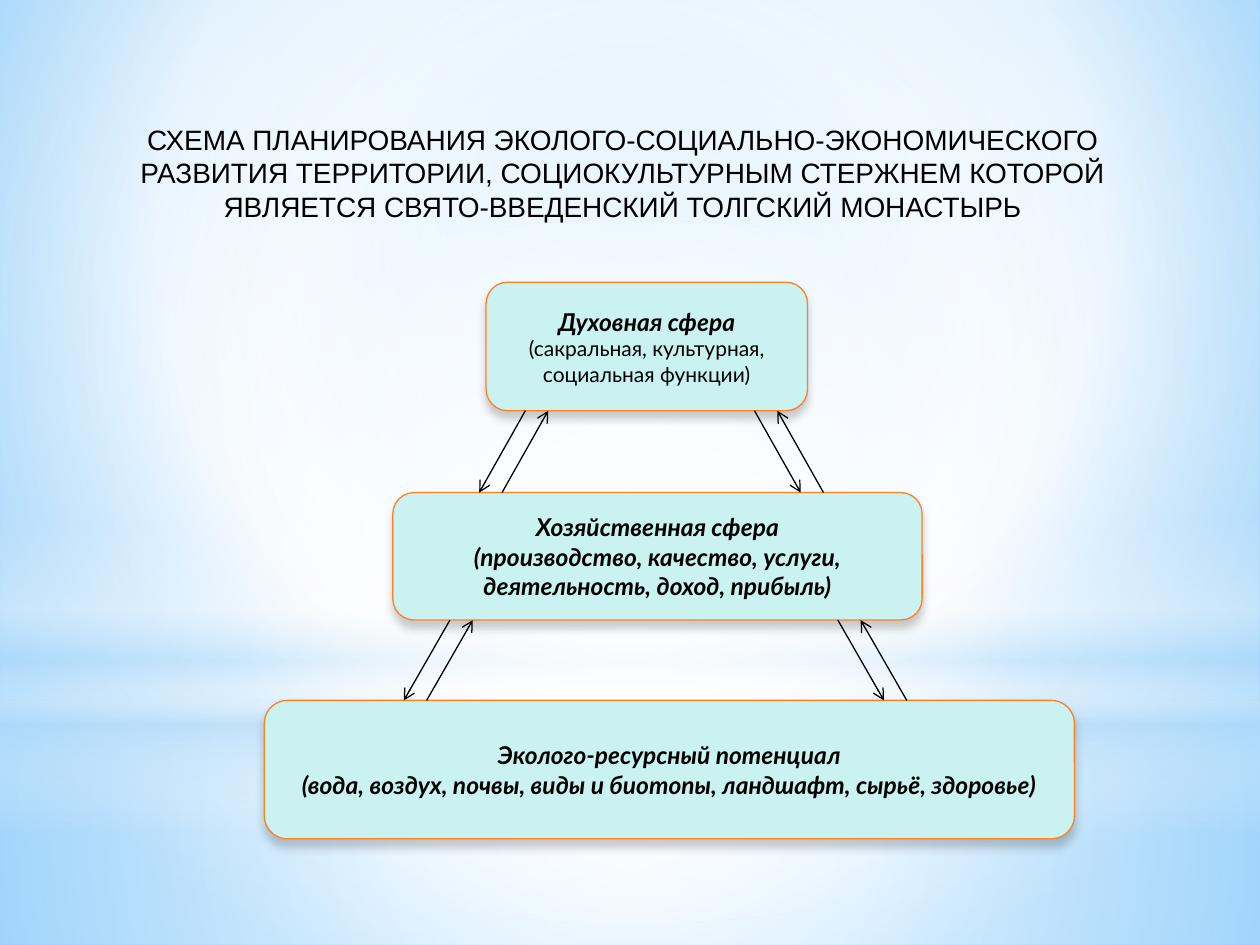
from dataclasses import dataclass

from lxml.etree import SubElement
from pptx import Presentation
from pptx.dml.color import RGBColor
from pptx.enum.shapes import MSO_CONNECTOR, MSO_SHAPE
from pptx.enum.text import MSO_ANCHOR, MSO_AUTO_SIZE, PP_ALIGN
from pptx.oxml.ns import qn
from pptx.util import Cm, Pt


@dataclass(frozen=True)
class Theme:
    ink: str = "000000"
    box: str = "CAF2F1"
    edge: str = "FF8021"
    white: str = "FFFFFF"
    haze: str = "B4DCFA"
    sky: str = "9ED5FF"
    deep: str = "5BB9FF"
    head_font: str = "Arial"
    body_font: str = "Lato"
    head: int = 16
    body: int = 14
    small: int = 12
    line: float = 0.75


def node(parent, tag, **attrs):
    return SubElement(parent, qn(tag), {key: str(val) for key, val in attrs.items()})


def tint(parent, color, alpha):
    node(node(parent, "a:srgbClr", val=color), "a:alpha", val=alpha * 1000)


def blend(holder, stops, center=None, angle=0):
    """Swap the solid fill in holder for a gradient."""
    old = holder.find(qn("a:solidFill"))
    grad = node(holder, "a:gradFill", rotWithShape=1)
    holder.replace(old, grad)
    marks = node(grad, "a:gsLst")
    for place, color, alpha in stops:
        tint(node(marks, "a:gs", pos=place * 1000), color, alpha)
    if center:
        route = node(grad, "a:path", path="circle")
        sides = {side: val * 1000 for side, val in zip("ltrb", center)}
        node(route, "a:fillToRect", **sides)
    else:
        node(grad, "a:lin", ang=angle * 60000, scaled=0)


class Board:
    def __init__(self, slide, theme):
        self.slide, self.theme = slide, theme

    def shape(self, kind, area):
        item = self.slide.shapes.add_shape(kind, *map(Cm, area))
        item.shadow.inherit = False
        item.fill.solid()
        return item

    def back(self, stops, center):
        self.slide.background.fill.solid()
        blend(self.slide._element.find(".//" + qn("p:bgPr")), stops, center)

    def layer(self, kind, area, stops, center=None, angle=0):
        item = self.shape(kind, area)
        item.line.fill.background()
        blend(item._element.spPr, stops, center, angle)

    def label(self, para, text, font, size, strong=False):
        para.alignment = PP_ALIGN.CENTER
        run = para.add_run()
        run.text = text
        run.font.name, run.font.size = font, Pt(size)
        run.font.bold = run.font.italic = strong
        run.font.color.rgb = RGBColor.from_string(self.theme.ink)

    def title(self, text, area):
        item = self.slide.shapes.title
        item.left, item.top, item.width, item.height = map(Cm, area)
        frame = item.text_frame
        frame.word_wrap = True
        frame.auto_size = MSO_AUTO_SIZE.NONE
        frame.vertical_anchor = MSO_ANCHOR.TOP
        self.label(frame.paragraphs[0], text, self.theme.head_font, self.theme.head)
        # Keep the title in front of the backdrop
        self.slide.shapes._spTree.append(item._element)

    def box(self, area, lines):
        look = self.theme
        item = self.shape(MSO_SHAPE.ROUNDED_RECTANGLE, area)
        item.fill.fore_color.rgb = RGBColor.from_string(look.box)
        item.line.color.rgb = RGBColor.from_string(look.edge)
        item.line.width = Pt(look.line)
        glow = node(item._element.spPr.find(qn("a:effectLst")), "a:outerShdw",
                    blurRad=Pt(5), dist=Pt(4), dir=90 * 60000, rotWithShape=0)
        tint(glow, look.ink, 20)
        frame = item.text_frame
        frame.word_wrap = True
        frame.vertical_anchor = MSO_ANCHOR.MIDDLE
        for i, (text, size, strong) in enumerate(lines):
            para = frame.add_paragraph() if i else frame.paragraphs[0]
            self.label(para, text, look.body_font, size, strong)

    def arrow(self, start, end):
        item = self.slide.shapes.add_connector(
            MSO_CONNECTOR.STRAIGHT, *map(Cm, (*start, *end)))
        item.line.color.rgb = RGBColor.from_string(self.theme.ink)
        item.line.width = Pt(self.theme.line)
        node(item.line._get_or_add_ln(), "a:tailEnd", type="arrow")
        node(item._element.spPr, "a:effectLst")

    def pair(self, x, top, low, shift, gap=0.46):
        """One arrow down and, beside it, one arrow up."""
        self.arrow((x, top), (x + shift, low))
        self.arrow((x + gap + shift, low), (x + gap, top))


def main():
    deck = Presentation()
    wide, high = 25.4, 19.05
    deck.slide_width, deck.slide_height = Cm(wide), Cm(high)
    look = Theme()
    board = Board(deck.slides.add_slide(deck.slide_layouts[5]), look)

    # Backdrop: sky, floor, wall, horizon and light
    mid, split = (50, 50, 50, 50), 14.17
    board.back([(0, look.sky, 100), (60, look.white, 100), (100, look.deep, 100)],
               (20, 10, 20, 60))
    board.layer(MSO_SHAPE.RECTANGLE, (0, split, wide, high - split),
                [(0, look.white, 91), (37, look.white, 76), (100, look.haze, 79)], mid)
    board.layer(MSO_SHAPE.RECTANGLE, (0, 0, wide, split),
                [(0, look.white, 89), (48, look.white, 62), (100, look.haze, 79)], mid)
    board.layer(MSO_SHAPE.RECTANGLE, (0, 10.46, wide, 6.35),
                [(0, look.white, 0), (29, look.white, 30), (45, look.haze, 40),
                 (55, look.white, 26), (65, look.haze, 60), (100, look.white, 0)],
                angle=90)
    board.layer(MSO_SHAPE.OVAL, (0, 4.45, wide, split),
                [(0, look.white, 100), (56, look.white, 0)], mid)

    # Title
    board.title("СХЕМА ПЛАНИРОВАНИЯ ЭКОЛОГО-СОЦИАЛЬНО-ЭКОНОМИЧЕСКОГО РАЗВИТИЯ "
                "ТЕРРИТОРИИ, СОЦИОКУЛЬТУРНЫМ СТЕРЖНЕМ КОТОРОЙ ЯВЛЯЕТСЯ "
                "СВЯТО-ВВЕДЕНСКИЙ ТОЛГСКИЙ МОНАСТЫРЬ", (1.57, 2.34, 21.97, 2.64))

    # Three levels, from top to base
    levels = [
        ((9.8, 5.69, 6.48, 2.59),
         [("Духовная сфера", look.body, True),
          ("(сакральная, культурная, социальная функции)", look.small, False)]),
        ((7.92, 9.93, 10.67, 2.57),
         [("Хозяйственная сфера", look.body, True),
          ("(производство, качество, услуги, деятельность, доход, прибыль)",
           look.body, True)]),
        ((5.33, 14.12, 16.33, 2.79),
         [("Эколого-ресурсный потенциал", look.body, True),
          ("(вода, воздух, почвы, виды и биотопы, ландшафт, сырьё, здоровье)",
           look.body, True)]),
    ]
    for area, lines in levels:
        board.box(area, lines)

    # Arrow pairs that fill the gaps between levels
    areas = [area for area, _ in levels]
    sides = [(10.59, 15.21), (9.07, 16.89)]
    for upper, lower, (left, right) in zip(areas, areas[1:], sides):
        top, low = upper[1] + upper[3], lower[1]
        board.pair(left, top, low, -0.93)
        board.pair(right, top, low, 0.93)

    deck.save("out.pptx")


if __name__ == "__main__":
    main()
